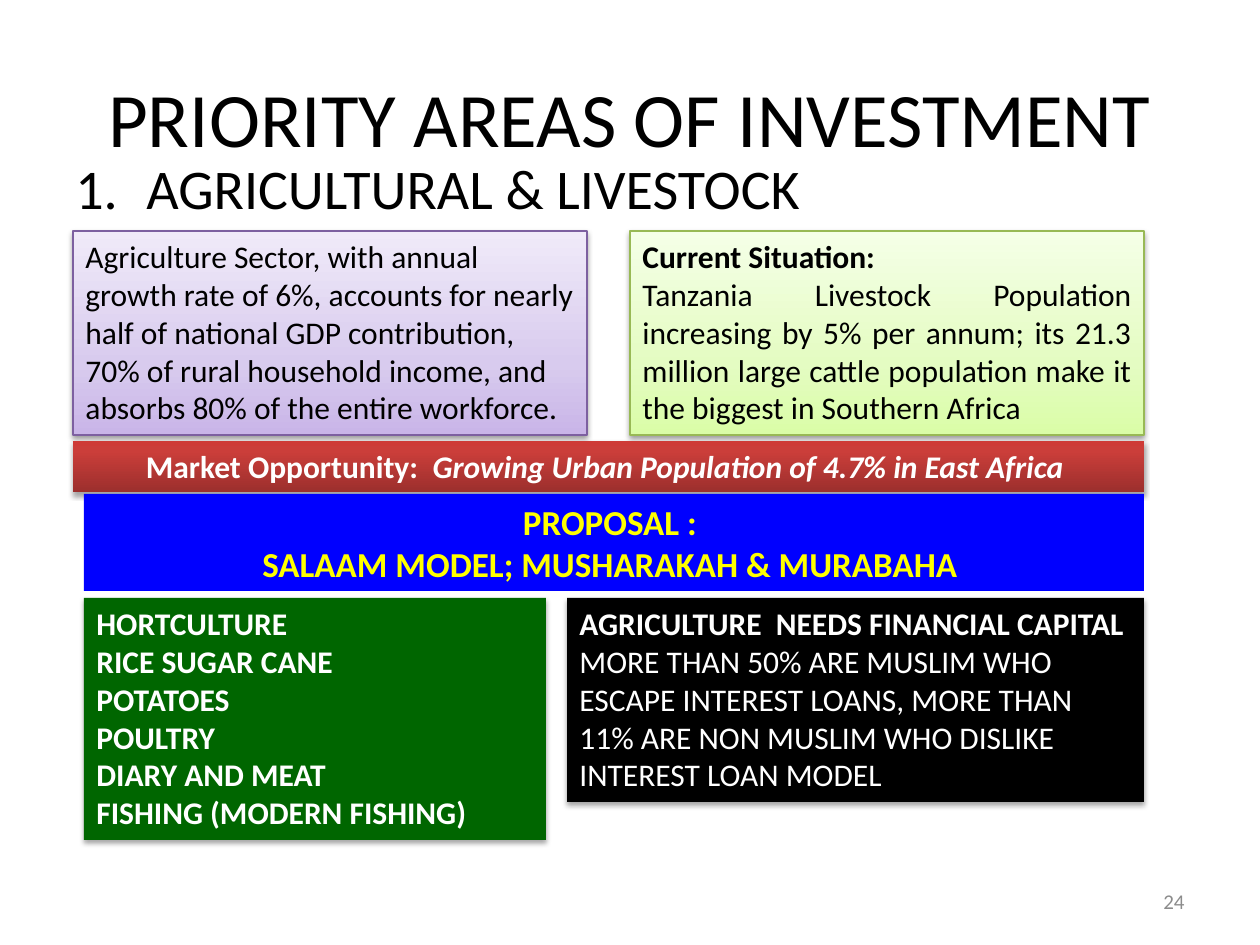
from lxml.etree import SubElement
from pptx import Presentation
from pptx.dml.color import RGBColor
from pptx.enum.shapes import MSO_SHAPE
from pptx.enum.text import MSO_ANCHOR, PP_ALIGN
from pptx.oxml import parse_xml
from pptx.oxml.ns import nsdecls, qn
from pptx.util import Pt

PX = 914400 // 126
LEFT, CENTER, RIGHT, JUSTIFY = PP_ALIGN.LEFT, PP_ALIGN.CENTER, PP_ALIGN.RIGHT, PP_ALIGN.JUSTIFY

BLACK = RGBColor(0, 0, 0)
WHITE = RGBColor(255, 255, 255)
GRAY = RGBColor(0x8C, 0x8C, 0x8C)
BLUE = RGBColor(0, 0, 255)
YELLOW = RGBColor(255, 255, 0)
GREEN = RGBColor(0, 0x66, 0)
PURPLE_LINE = RGBColor(0x7D, 0x60, 0xA0)
LIME_LINE = RGBColor(0x98, 0xB9, 0x55)

# Stops as (percent, colour), running from the bottom edge to the top
PURPLE_FADE = [(0, RGBColor(0xC9, 0xB5, 0xE8)), (35, RGBColor(0xD8, 0xCB, 0xEE)),
               (100, RGBColor(0xF0, 0xEA, 0xF9))]
LIME_FADE = [(0, RGBColor(0xDA, 0xFD, 0xA7)), (35, RGBColor(0xE4, 0xFC, 0xC2)),
             (100, RGBColor(0xF5, 0xFF, 0xE7))]
RED_FADE = [(0, RGBColor(0x9C, 0x2F, 0x2D)), (80, RGBColor(0xCB, 0x3E, 0x3A)),
            (100, RGBColor(0xCE, 0x3B, 0x37))]

CROPS = ["HORTCULTURE", "RICE SUGAR CANE", "POTATOES", "POULTRY",
         "DIARY AND MEAT", "FISHING (MODERN FISHING)"]


def add_para(frame, text, size, color, align=LEFT, bold=False):
    """Fill the frame's empty first paragraph, or append a new one."""
    para = frame.paragraphs[0]
    if para.runs:
        para = frame.add_paragraph()
    para.alignment = align
    para.font.name = "Calibri"
    para.font.size = Pt(size)
    para.font.bold = bold
    para.font.color.rgb = color
    para.add_run().text = text
    return para


def add_label(page, area, text, size, color, align=LEFT, anchor=MSO_ANCHOR.MIDDLE):
    frame = page.shapes.add_textbox(*(PX * n for n in area)).text_frame
    frame.word_wrap = True
    frame.vertical_anchor = anchor
    return add_para(frame, text, size, color, align)


def number_para(para, indent):
    properties = para._p.get_or_add_pPr()
    properties.set("marL", str(indent * PX))
    properties.set("indent", str(-indent * PX))
    SubElement(properties, qn("a:buFont"), typeface="+mj-lt")
    SubElement(properties, qn("a:buAutoNum"), type="arabicPeriod")


def fade(box, stops):
    box.fill.gradient()
    gradient = box._element.spPr.find(qn("a:gradFill"))
    stop_list = gradient.find(qn("a:gsLst"))
    for stop in list(stop_list):
        stop_list.remove(stop)
    for percent, color in stops:
        stop = SubElement(stop_list, qn("a:gs"), pos=str(percent * 1000))
        SubElement(stop, qn("a:srgbClr"), val=str(color))
    gradient.find(qn("a:lin")).set("ang", "16200000")


def cast_shadow(box, distance, opacity):
    properties = box._element.spPr
    properties.remove(properties.find(qn("a:effectLst")))
    properties.append(parse_xml(
        f'<a:effectLst {nsdecls("a")}><a:outerShdw blurRad="{Pt(3.1)}" dist="{Pt(distance)}" '
        f'dir="5400000" rotWithShape="0"><a:srgbClr val="000000">'
        f'<a:alpha val="{opacity * 1000}"/></a:srgbClr></a:outerShdw></a:effectLst>'))


def add_panel(page, area, fill, line=None, shadow=True):
    """Draw a box with a flat colour or a list of stops; return its text frame."""
    box = page.shapes.add_shape(MSO_SHAPE.RECTANGLE, *(PX * n for n in area))
    box.shadow.inherit = False
    if isinstance(fill, list):
        fade(box, fill)
    else:
        box.fill.solid()
        box.fill.fore_color.rgb = fill
    if line is None:
        box.line.fill.background()
    else:
        box.line.color.rgb = line
        box.line.width = Pt(0.75)
    if shadow:
        cast_shadow(box, *((1.8, 35) if line is None else (1.6, 38)))
    box.text_frame.word_wrap = True
    box.text_frame.vertical_anchor = MSO_ANCHOR.TOP
    return box.text_frame


def main():
    deck = Presentation()
    deck.slide_width, deck.slide_height = 1260 * PX, 945 * PX
    page = deck.slides.add_slide(deck.slide_layouts[6])

    add_label(page, (63, 38, 1134, 157), "PRIORITY AREAS OF INVESTMENT", 44, BLACK, CENTER)
    heading = add_label(page, (63, 147, 1134, 624), "AGRICULTURAL & LIVESTOCK", 32, BLACK,
                        anchor=MSO_ANCHOR.TOP)
    number_para(heading, 71)

    sector = add_panel(page, (73, 231, 514, 204), PURPLE_FADE, PURPLE_LINE)
    add_para(sector, "Agriculture Sector, with annual growth rate of 6%, accounts for nearly half of "
             "national GDP contribution, 70% of rural household income, and absorbs 80% of the "
             "entire workforce.", 18, BLACK)

    situation = add_panel(page, (630, 231, 514, 204), LIME_FADE, LIME_LINE)
    add_para(situation, "Current Situation:", 18, BLACK, bold=True)
    add_para(situation, "Tanzania Livestock Population increasing by 5% per annum; its 21.3 million "
             "large cattle population make it the biggest in Southern Africa", 18, BLACK, JUSTIFY)

    market = add_panel(page, (73, 441, 1071, 51), RED_FADE)
    para = add_para(market, "Market Opportunity:  ", 18, WHITE, CENTER, bold=True)
    span = para.add_run()
    span.text = "Growing Urban Population of 4.7% in East Africa "
    span.font.italic = True

    proposal = add_panel(page, (84, 494, 1060, 97), BLUE, shadow=False)
    for text in ("PROPOSAL : ", "SALAAM MODEL; MUSHARAKAH & MURABAHA "):
        add_para(proposal, text, 20, YELLOW, CENTER, bold=True)

    products = add_panel(page, (84, 598, 462, 242), GREEN)
    for text in CROPS:
        add_para(products, text, 18, WHITE, bold=True)

    needs = add_panel(page, (567, 598, 577, 204), BLACK)
    add_para(needs, "AGRICULTURE  NEEDS FINANCIAL CAPITAL", 18, WHITE, bold=True)
    add_para(needs, "MORE THAN 50% ARE MUSLIM WHO ESCAPE INTEREST LOANS, MORE THAN 11% ARE NON "
             "MUSLIM WHO DISLIKE INTEREST LOAN MODEL", 18, WHITE)

    add_label(page, (903, 876, 294, 50), "24", 12, GRAY, RIGHT)
    deck.save("out.pptx")


if __name__ == "__main__":
    main()
